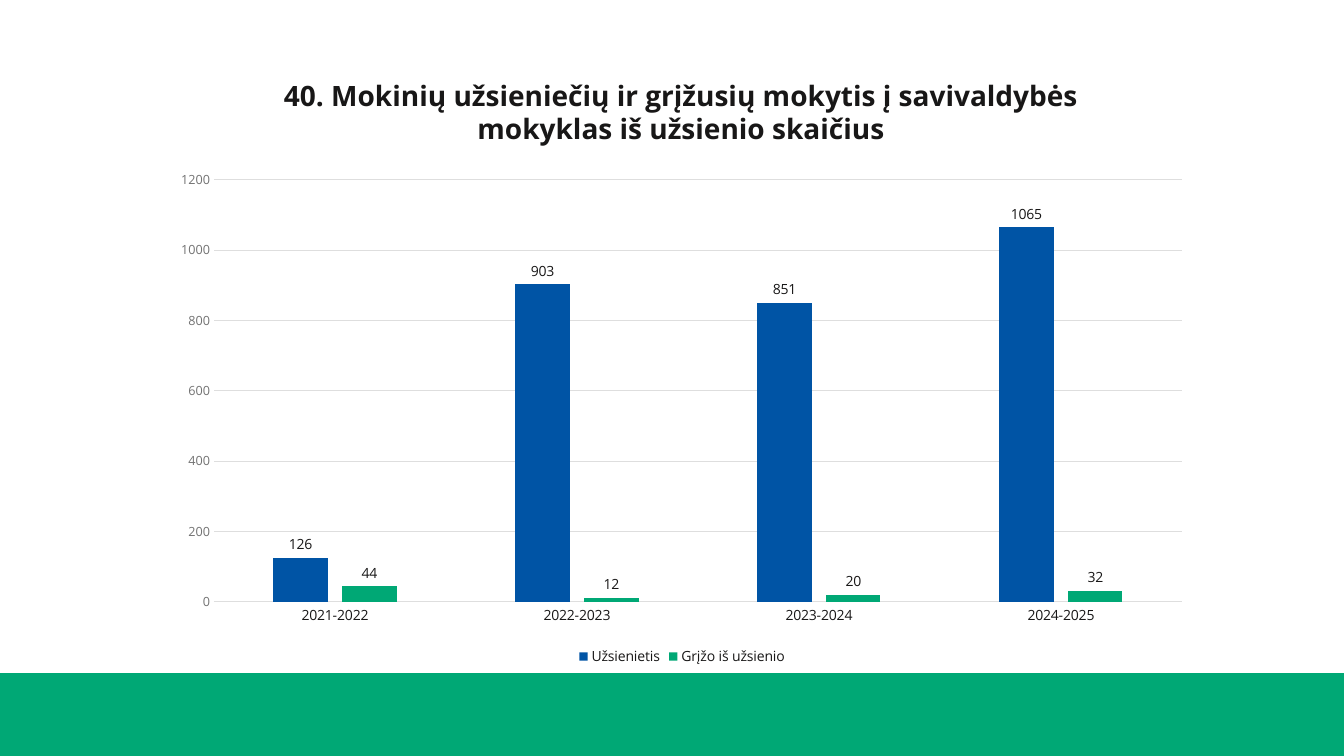
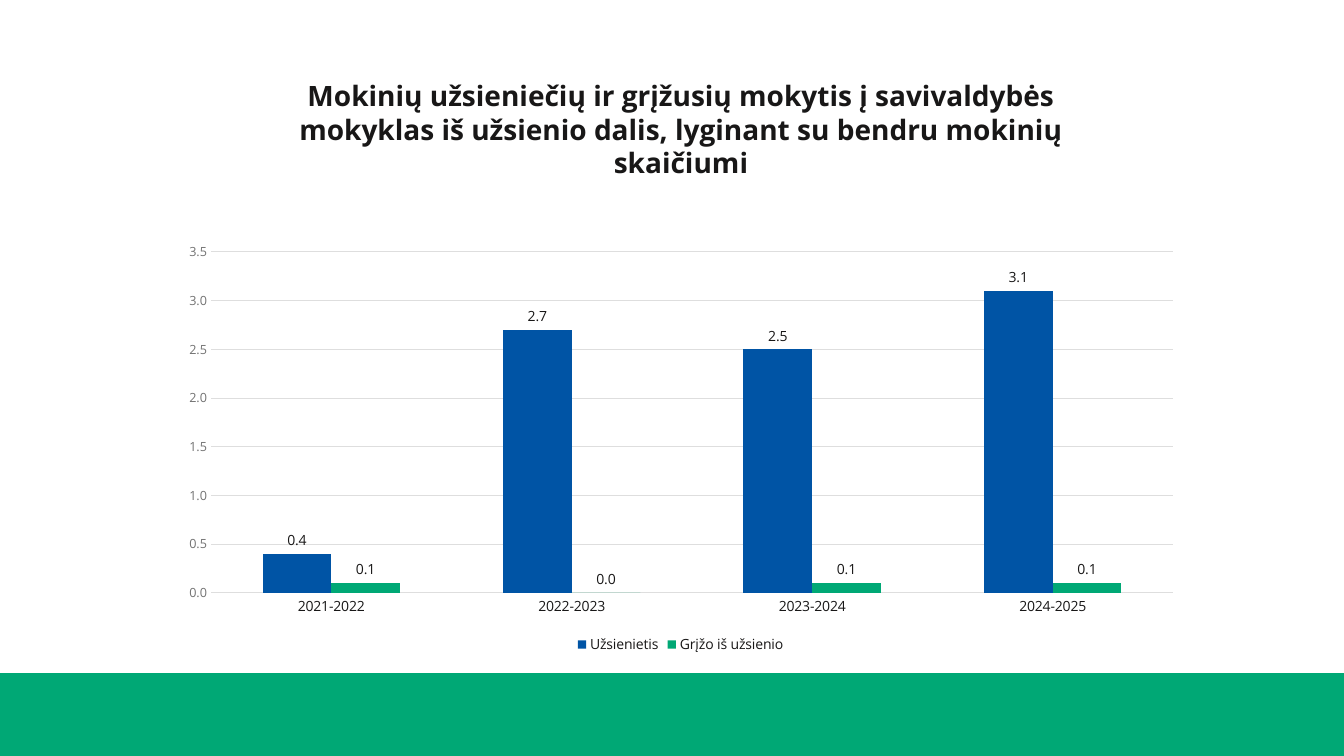
from dataclasses import dataclass

from pptx import Presentation
from pptx.chart.data import CategoryChartData
from pptx.dml.color import RGBColor as Rgb
from pptx.enum.chart import XL_CHART_TYPE as ChartType
from pptx.enum.chart import XL_LABEL_POSITION as LabelPos
from pptx.enum.chart import XL_LEGEND_POSITION as LegendPos
from pptx.enum.chart import XL_TICK_MARK as TickMark
from pptx.enum.shapes import MSO_SHAPE as Shape
from pptx.enum.text import MSO_ANCHOR as Anchor
from pptx.enum.text import MSO_AUTO_SIZE as AutoSize
from pptx.enum.text import PP_ALIGN as Align
from pptx.oxml import parse_xml
from pptx.oxml.ns import nsdecls, qn
from pptx.util import Pt

EMU_PER_PX = 914400 / 100.8
SLIDE_W, SLIDE_H = 1344, 756
TITLE_ONLY = 5


@dataclass(frozen=True)
class Theme:
    font: str = "Open Sans"
    ink: Rgb = Rgb.from_string("181717")
    muted: Rgb = Rgb.from_string("727272")
    grid: Rgb = Rgb.from_string("DEDEDE")
    blue: Rgb = Rgb.from_string("0054A5")
    green: Rgb = Rgb.from_string("00A875")
    title_size: int = 20
    label_size: int = 10
    scale_size: int = 9
    hairline: float = 0.75


@dataclass(frozen=True)
class ChartSlide:
    title: str
    title_box: tuple
    chart_box: tuple
    plot_box: tuple
    foreigners: tuple
    returned: tuple
    scale_max: float
    scale_step: float
    number_format: str
    gap: int
    overlap: int
    base_line: bool


THEME = Theme()
YEARS = ("2021-2022", "2022-2023", "2023-2024", "2024-2025")
CHART_SLIDES = (
    ChartSlide(
        title="40. Mokinių užsieniečių ir grįžusių mokytis į savivaldybės "
              "mokyklas iš užsienio skaičius",
        title_box=(261, 73, 840, 78),
        chart_box=(160, 160, 1044, 510),
        plot_box=(54, 20, 968, 422),
        foreigners=(126, 903, 851, 1065),
        returned=(44, 12, 20, 32),
        scale_max=1200, scale_step=200, number_format="General",
        gap=219, overlap=-27, base_line=True,
    ),
    ChartSlide(
        title="Mokinių užsieniečių ir grįžusių mokytis į savivaldybės "
              "mokyklas iš užsienio dalis, lyginant su bendru mokinių skaičiumi",
        title_box=(261, 71, 840, 116),
        chart_box=(168, 232, 1025, 426),
        plot_box=(43, 20, 962, 341),
        foreigners=(0.4, 2.7, 2.5, 3.1),
        returned=(0.1, 0, 0.1, 0.1),
        scale_max=3.5, scale_step=0.5, number_format="0.0",
        gap=150, overlap=0, base_line=False,
    ),
)


def px(length):
    return round(length * EMU_PER_PX)


def px_box(box):
    return tuple(px(length) for length in box)


def style_font(font, size, color, bold=False):
    font.name = THEME.font
    font.size = Pt(size)
    font.bold = bold
    font.color.rgb = color


def style_line(line):
    line.color.rgb = THEME.grid
    line.width = Pt(THEME.hairline)


def add_master_band(master, slide, box):
    band = slide.shapes.add_shape(Shape.RECTANGLE, *px_box(box))
    band.shadow.inherit = False
    band.fill.solid()
    band.fill.fore_color.rgb = THEME.green
    band.line.fill.background()
    master.shapes.element.insert(2, band.element)


def fill_title(slide, text, box):
    title = slide.shapes.title
    title.left, title.top, title.width, title.height = px_box(box)
    frame = title.text_frame
    frame.auto_size = AutoSize.NONE
    frame.word_wrap = True
    frame.vertical_anchor = Anchor.MIDDLE
    frame.margin_left = frame.margin_right = 0
    frame.margin_top = frame.margin_bottom = 0
    paragraph = frame.paragraphs[0]
    paragraph.alignment = Align.CENTER
    run = paragraph.add_run()
    run.text = text
    style_font(run.font, THEME.title_size, THEME.ink, bold=True)


def place_plot(chart, chart_box, plot_box):
    width, height = chart_box[2:]
    fractions = zip("xywh", plot_box, (width, height, width, height))
    entries = "".join(f'<c:{side} val="{part / whole:.4f}"/>'
                      for side, part, whole in fractions)
    layout = parse_xml(
        f'<c:layout {nsdecls("c")}><c:manualLayout>'
        '<c:layoutTarget val="inner"/>'
        '<c:xMode val="edge"/><c:yMode val="edge"/>'
        f'{entries}</c:manualLayout></c:layout>')
    plot_area = chart.element.find(".//" + qn("c:plotArea"))
    for default in plot_area.findall(qn("c:layout")):
        plot_area.remove(default)
    plot_area.insert(0, layout)


def style_axes(chart, content):
    years, scale = chart.category_axis, chart.value_axis
    for axis in (years, scale):
        axis.major_tick_mark = axis.minor_tick_mark = TickMark.NONE
        axis.format.line.fill.background()
    if content.base_line:
        style_line(years.format.line)
    style_font(years.tick_labels.font, THEME.label_size, THEME.ink)
    style_font(scale.tick_labels.font, THEME.scale_size, THEME.muted)
    scale.minimum_scale = 0
    scale.maximum_scale = content.scale_max
    scale.major_unit = content.scale_step
    scale.tick_labels.number_format = content.number_format
    scale.tick_labels.number_format_is_linked = False
    scale.has_major_gridlines = True
    style_line(scale.major_gridlines.format.line)


def style_columns(plot, content):
    plot.gap_width = content.gap
    plot.overlap = content.overlap
    plot.vary_by_categories = False
    for series, color in zip(plot.series, (THEME.blue, THEME.green)):
        series.format.fill.solid()
        series.format.fill.fore_color.rgb = color
        series.invert_if_negative = False
        labels = series.data_labels
        labels.show_value = True
        labels.position = LabelPos.OUTSIDE_END
        labels.number_format = content.number_format
        labels.number_format_is_linked = False
        style_font(labels.font, THEME.label_size, THEME.ink)


def add_pupil_chart(slide, content):
    pupils = CategoryChartData(number_format=content.number_format)
    pupils.categories = YEARS
    pupils.add_series("Užsienietis", content.foreigners)
    pupils.add_series("Grįžo iš užsienio", content.returned)
    chart = slide.shapes.add_chart(
        ChartType.COLUMN_CLUSTERED, *px_box(content.chart_box), pupils).chart
    chart.has_title = False
    style_font(chart.font, THEME.label_size, THEME.ink)
    chart.has_legend = True
    chart.legend.position = LegendPos.BOTTOM
    chart.legend.include_in_layout = False
    style_font(chart.legend.font, THEME.label_size, THEME.ink)
    style_axes(chart, content)
    style_columns(chart.plots[0], content)
    place_plot(chart, content.chart_box, content.plot_box)


def add_chart_slide(deck, content):
    slide = deck.slides.add_slide(deck.slide_layouts[TITLE_ONLY])
    fill_title(slide, content.title, content.title_box)
    add_pupil_chart(slide, content)
    return slide


def main():
    deck = Presentation()
    deck.slide_width, deck.slide_height = px(SLIDE_W), px(SLIDE_H)
    slides = [add_chart_slide(deck, content) for content in CHART_SLIDES]
    add_master_band(deck.slide_master, slides[0], (0, 673, SLIDE_W, 83))
    deck.save("out.pptx")


if __name__ == "__main__":
    main()
